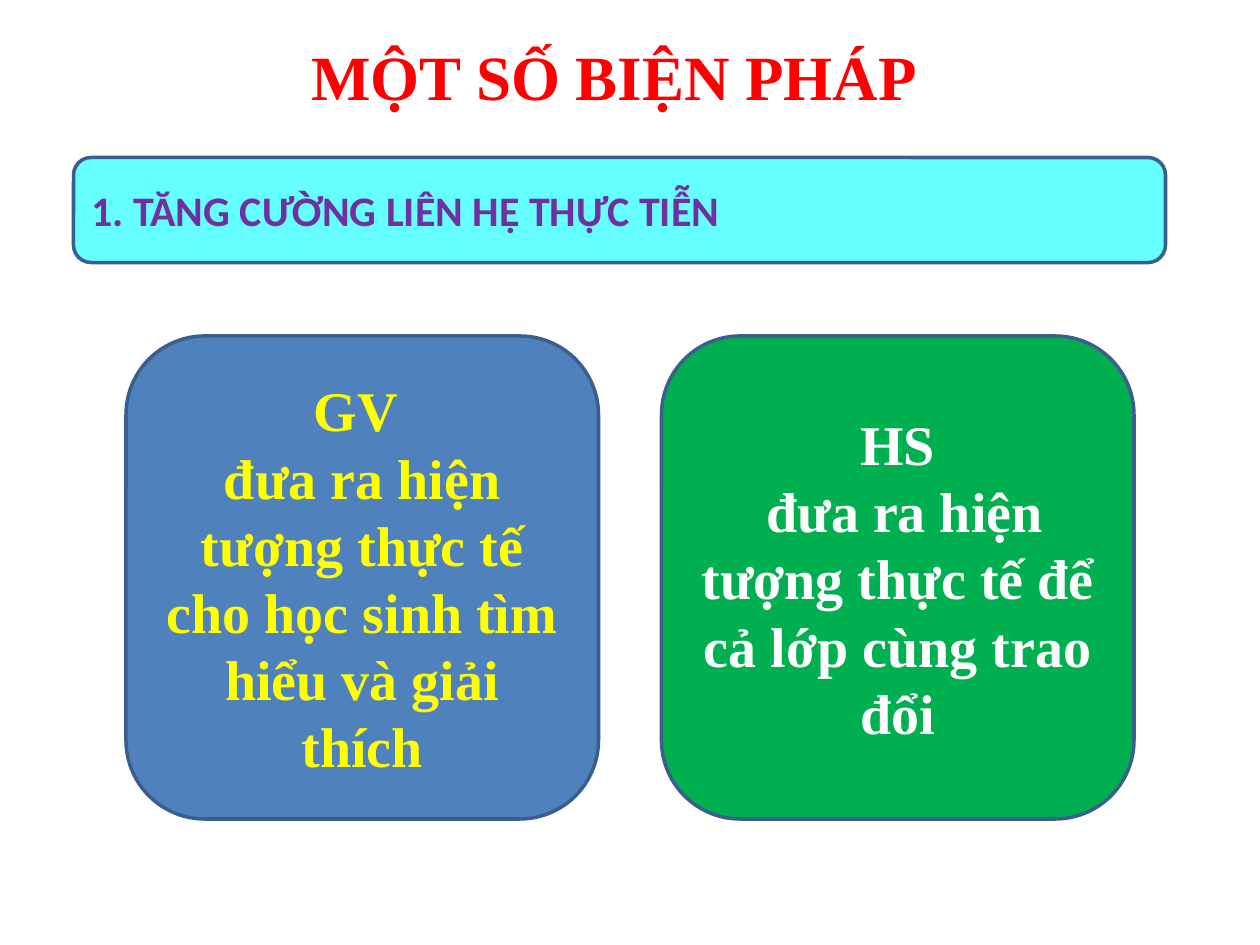
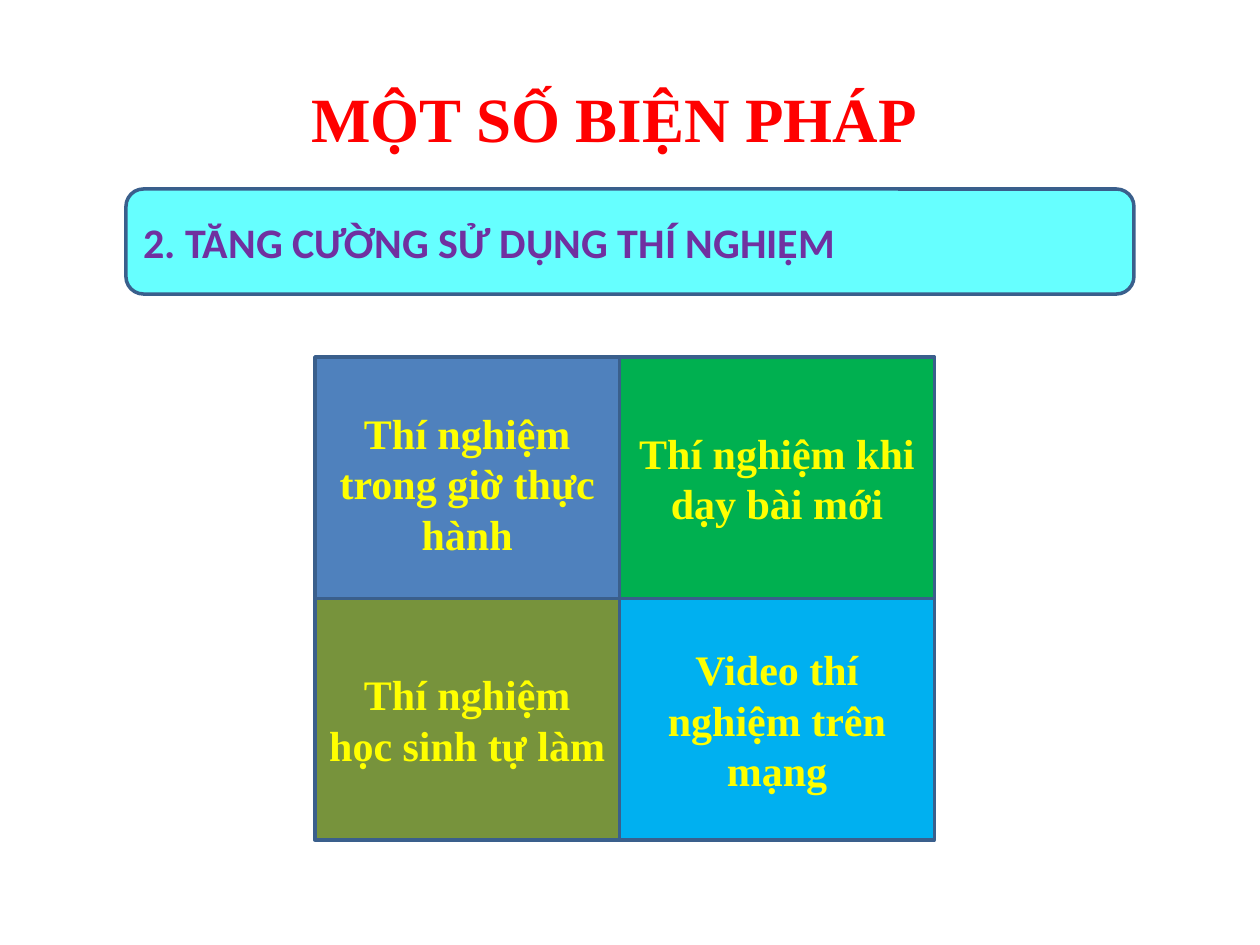
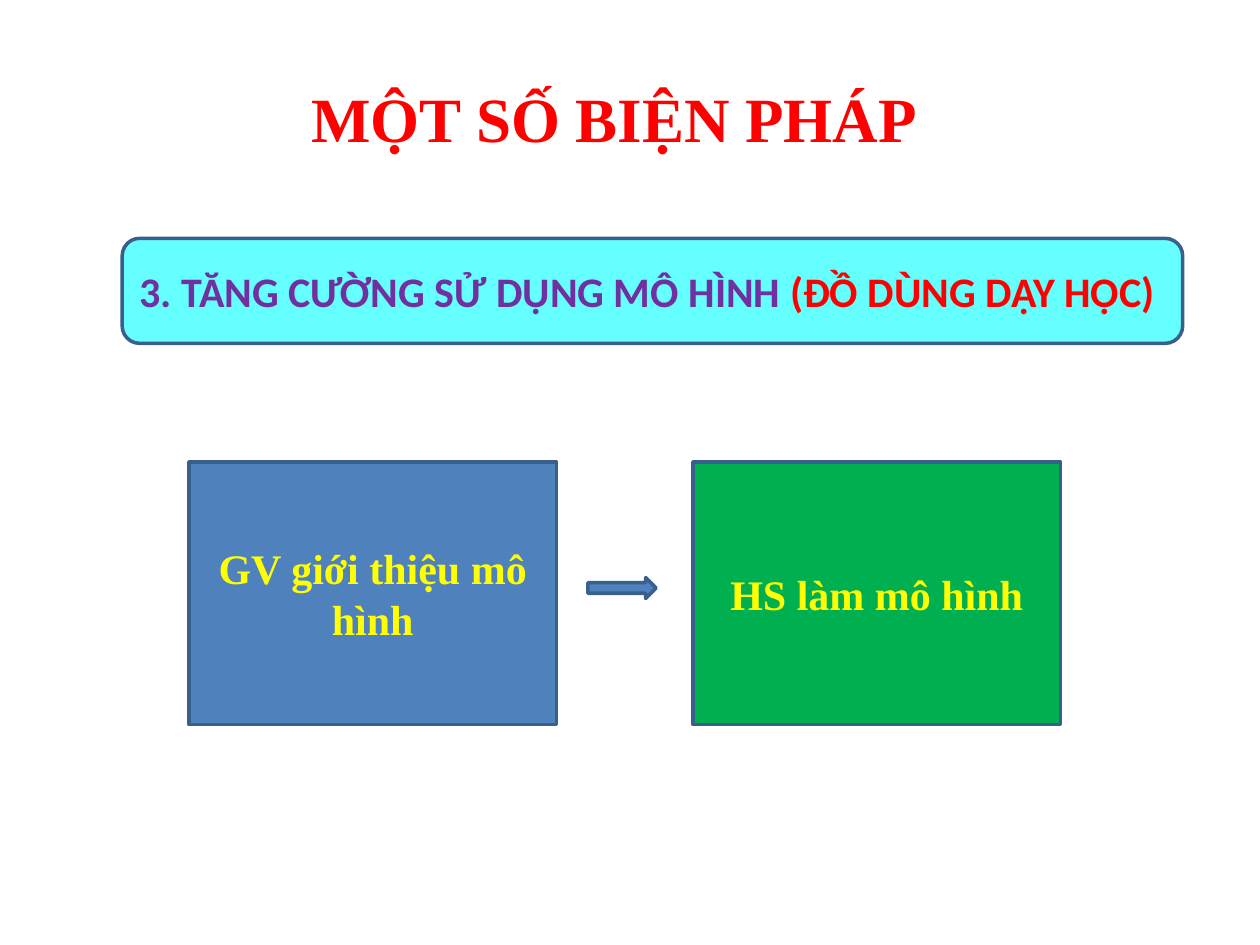
from dataclasses import dataclass

from pptx import Presentation
from pptx.dml.color import RGBColor
from pptx.enum.shapes import MSO_SHAPE
from pptx.enum.text import MSO_ANCHOR, MSO_AUTO_SIZE, PP_ALIGN
from pptx.util import Inches, Pt


@dataclass(frozen=True)
class Theme:
    red: str = "FF0000"
    purple: str = "7030A0"
    yellow: str = "FFFF00"
    white: str = "FFFFFF"
    cyan: str = "66FFFF"
    blue: str = "4F81BD"
    green: str = "00B050"
    olive: str = "77933C"
    sky: str = "00B0F0"
    outline: str = "3A5F8C"
    serif: str = "Times New Roman"
    sans: str = "Calibri"
    title_size: int = 36
    card_size: int = 32
    body_size: int = 24
    line_width: int = 2
    title_box: tuple = (8, 101, 14.2)  # left, width, height
    band_height: int = 10


THEME = Theme()

# The slide is a grid of 120 columns and 90 rows; boxes are left, top, width, height
COLUMNS = 120
SLIDE_WIDTH, SLIDE_HEIGHT = Inches(10), Inches(7.5)
UNIT = SLIDE_WIDTH / COLUMNS

# Content
TITLE = "MỘT SỐ BIỆN PHÁP"

# title top, band left, band top, band width, band runs
HEADERS = [
    (3, 7, 15, 104, [("1. TĂNG CƯỜNG LIÊN HỆ THỰC TIỄN", THEME.purple)]),
    (7, 12, 18, 96, [("2. TĂNG CƯỜNG SỬ DỤNG THÍ NGHIỆM", THEME.purple)]),
    (7, 11.64, 22.7, 101, [("3. TĂNG CƯỜNG SỬ DỤNG MÔ HÌNH ", THEME.purple),
                           ("(ĐỒ DÙNG DẠY HỌC)", THEME.red)]),
]

ROLES = [
    (THEME.blue, THEME.yellow,
     ["GV ", "đưa ra hiện tượng thực tế cho học sinh tìm hiểu và giải thích"]),
    (THEME.green, THEME.white,
     ["HS", " đưa ra hiện tượng thực tế để cả lớp cùng trao đổi"]),
]

# column, row, height, fill, text; the first tile reaches under the row below
EXPERIMENTS = [
    (0, 0, 24, THEME.blue, "Thí nghiệm trong giờ thực hành"),
    (1, 0, 23, THEME.green, "Thí nghiệm khi dạy bài mới"),
    (1, 1, 23, THEME.sky, "Video thí nghiệm trên mạng"),
    (0, 1, 23, THEME.olive, "Thí nghiệm học sinh tự làm"),
]

MODEL_STEPS = [
    (THEME.blue, "GV giới thiệu mô hình"),
    (THEME.green, "HS làm mô hình"),
]


def grid(*cells):
    return [round(cell * UNIT) for cell in cells]


def set_all(target, values):
    for name, value in values.items():
        setattr(target, name, value)


def write(text_frame, paragraphs, size, font, align):
    """Fill a frame with paragraphs, each a list of (text, colour) runs."""
    text_frame.word_wrap = True
    for index, runs in enumerate(paragraphs):
        paragraph = text_frame.add_paragraph() if index else text_frame.paragraphs[0]
        paragraph.alignment = align
        for text, color in runs:
            run = paragraph.add_run()
            run.text = text
            set_all(run.font, {"size": Pt(size), "name": font, "bold": True})
            run.font.color.rgb = RGBColor.from_string(color)


def add_block(slide, kind, box, fill, paragraphs=(), size=THEME.body_size,
              font=THEME.serif, align=PP_ALIGN.CENTER):
    shape = slide.shapes.add_shape(kind, *grid(*box))
    shape.shadow.inherit = False
    shape.fill.solid()
    shape.fill.fore_color.rgb = RGBColor.from_string(fill)
    shape.line.color.rgb = RGBColor.from_string(THEME.outline)
    shape.line.width = Pt(THEME.line_width)
    shape.text_frame.vertical_anchor = MSO_ANCHOR.MIDDLE
    write(shape.text_frame, paragraphs, size, font, align)


def add_header(slide, title_top, band_left, band_top, band_width, band_runs):
    """Place the title and the cyan heading band."""
    title = slide.shapes.title
    left, width, height = THEME.title_box
    box = grid(left, title_top, width, height)
    set_all(title, dict(zip(("left", "top", "width", "height"), box)))
    set_all(title.text_frame, {"auto_size": MSO_AUTO_SIZE.NONE,
                               "vertical_anchor": MSO_ANCHOR.TOP})
    write(title.text_frame, [[(TITLE, THEME.red)]],
          THEME.title_size, THEME.serif, PP_ALIGN.CENTER)
    add_block(slide, MSO_SHAPE.ROUNDED_RECTANGLE,
              (band_left, band_top, band_width, THEME.band_height),
              THEME.cyan, [band_runs], font=THEME.sans, align=PP_ALIGN.LEFT)


def add_roles(slide):
    """Two rounded cards side by side."""
    left, top, width, height, gap = 12, 32, 45, 46, 6
    for index, (fill, color, lines) in enumerate(ROLES):
        add_block(slide, MSO_SHAPE.ROUNDED_RECTANGLE,
                  (left + index * (width + gap), top, width, height), fill,
                  [[(line, color)] for line in lines], THEME.card_size)


def add_experiments(slide):
    """Four tiles, two by two."""
    lefts, widths, tops = (30, 59), (29, 30), (34, 57)
    for column, row, height, fill, text in EXPERIMENTS:
        add_block(slide, MSO_SHAPE.RECTANGLE,
                  (lefts[column], tops[row], widths[column], height),
                  fill, [[(text, THEME.yellow)]])


def add_model_steps(slide):
    """Two steps joined by a block arrow."""
    left, top, width, height, gap = 18, 44, 35, 25, 13
    for index, (fill, text) in enumerate(MODEL_STEPS):
        add_block(slide, MSO_SHAPE.RECTANGLE,
                  (left + index * (width + gap), top, width, height),
                  fill, [[(text, THEME.yellow)]])
    add_block(slide, MSO_SHAPE.RIGHT_ARROW, (left + width + 3, 55, 6.5, 2), THEME.blue)


def main():
    presentation = Presentation()
    set_all(presentation, {"slide_width": SLIDE_WIDTH, "slide_height": SLIDE_HEIGHT})
    title_only = presentation.slide_layouts[5]
    for header, add_body in zip(HEADERS, (add_roles, add_experiments, add_model_steps)):
        slide = presentation.slides.add_slide(title_only)
        add_header(slide, *header)
        add_body(slide)
    presentation.save("out.pptx")


if __name__ == "__main__":
    main()
